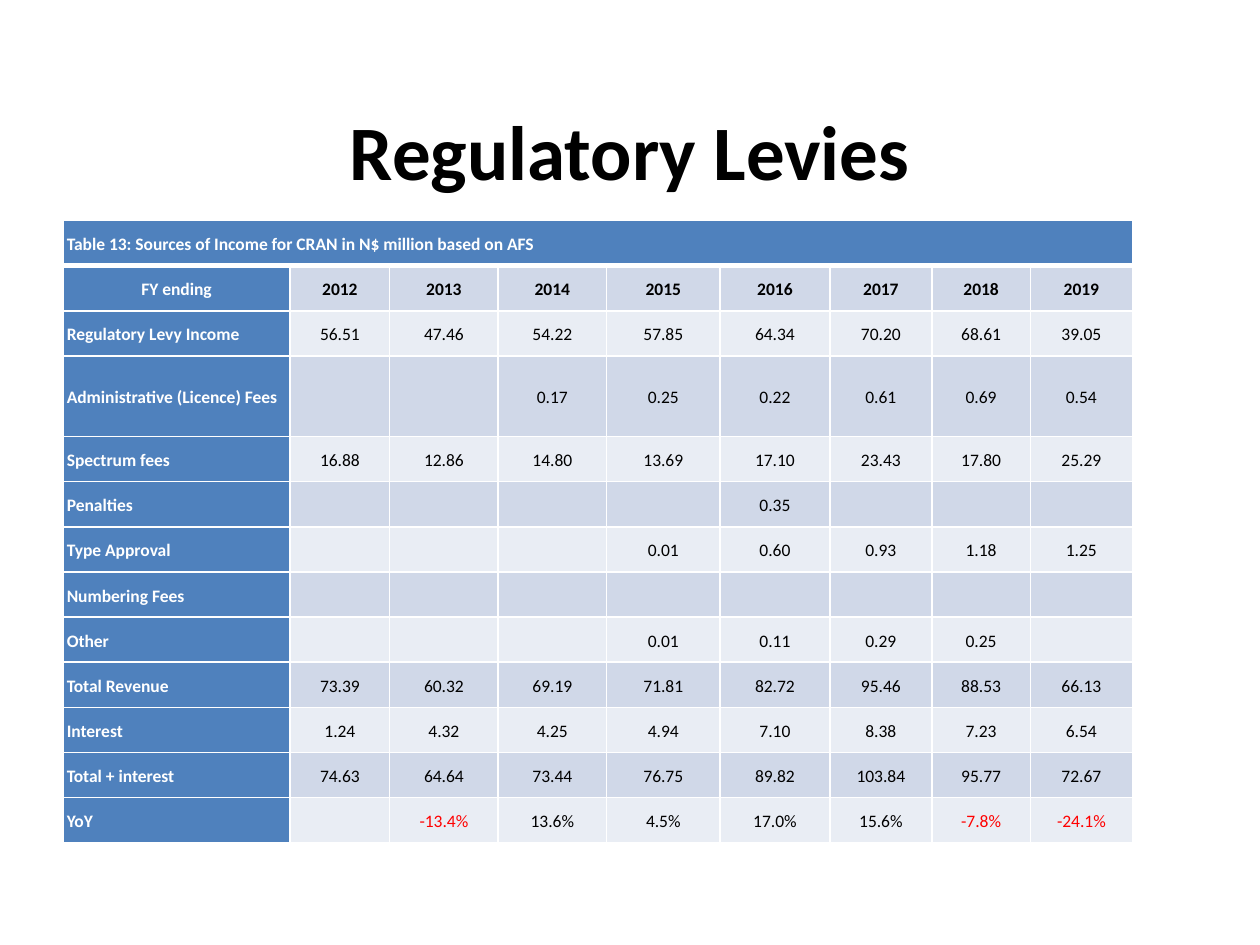
from dataclasses import dataclass

from lxml.etree import SubElement
from pptx import Presentation
from pptx.dml.color import RGBColor
from pptx.enum.text import MSO_ANCHOR as Anchor, PP_ALIGN as Align
from pptx.oxml.ns import qn
from pptx.util import Inches, Pt


@dataclass(frozen=True)
class Theme:
    font: str = "Calibri"
    title_size: int = 44
    cell_size: int = 10
    text: str = "000000"
    negative: str = "FF0000"
    light: str = "FFFFFF"
    accent: str = "4F81BD"
    bands: tuple = ("E9EDF4", "D0D8E8")
    rule: float = 1
    heavy_rule: float = 3


THEME = Theme()

TITLE = "Regulatory Levies"
CAPTION = "Table 13: Sources of Income for CRAN in N$ million based on AFS"
HEADINGS = ["FY ending", *(str(year) for year in range(2012, 2020))]
INCOME = [
    ["Regulatory Levy Income", "56.51", "47.46", "54.22", "57.85", "64.34", "70.20", "68.61", "39.05"],
    ["Administrative (Licence) Fees", "", "", "0.17", "0.25", "0.22", "0.61", "0.69", "0.54"],
    ["Spectrum fees", "16.88", "12.86", "14.80", "13.69", "17.10", "23.43", "17.80", "25.29"],
    ["Penalties", "", "", "", "", "0.35", "", "", ""],
    ["Type Approval", "", "", "", "0.01", "0.60", "0.93", "1.18", "1.25"],
    ["Numbering Fees", "", "", "", "", "", "", "", ""],
    ["Other", "", "", "", "0.01", "0.11", "0.29", "0.25", ""],
    ["Total Revenue", "73.39", "60.32", "69.19", "71.81", "82.72", "95.46", "88.53", "66.13"],
    ["Interest", "1.24", "4.32", "4.25", "4.94", "7.10", "8.38", "7.23", "6.54"],
    ["Total + interest", "74.63", "64.64", "73.44", "76.75", "89.82", "103.84", "95.77", "72.67"],
    ["YoY", "", "-13.4%", "13.6%", "4.5%", "17.0%", "15.6%", "-7.8%", "-24.1%"],
]
COLUMN_WIDTHS = [1.8, 0.79, 0.86, 0.86, 0.9, 0.87, 0.81, 0.78, 0.81]
TALL_ROW, TALL_HEIGHT = 3, 0.64


def style_font(font, size, color, bold):
    font.name = THEME.font
    font.size = Pt(size)
    font.bold = bold
    font.color.rgb = RGBColor.from_string(color)


def add_title(page, left, top, width, height):
    title = page.shapes.title
    title.left, title.top = Inches(left), Inches(top)
    title.width, title.height = Inches(width), Inches(height)
    frame = title.text_frame
    frame.text = TITLE
    frame.vertical_anchor = Anchor.MIDDLE
    para = frame.paragraphs[0]
    para.alignment = Align.CENTER
    style_font(para.font, THEME.title_size, THEME.text, True)


def set_borders(cell, top, bottom):
    # Border lines have to precede the fill in the cell properties
    properties = cell._tc.get_or_add_tcPr()
    weights = {"lnL": THEME.rule, "lnR": THEME.rule, "lnT": top, "lnB": bottom}
    for side, weight in weights.items():
        line = SubElement(properties, qn(f"a:{side}"), w=str(Pt(weight)))
        fill = SubElement(line, qn("a:solidFill"))
        SubElement(fill, qn("a:srgbClr"), val=THEME.light)


def cell_style(row, column, text):
    """Return fill, text colour, bold and alignment for a cell."""
    if row == 0:
        return THEME.accent, THEME.light, True, Align.LEFT
    if column == 0:
        alignment = Align.CENTER if row == 1 else Align.JUSTIFY
        return THEME.accent, THEME.light, True, alignment
    color = THEME.negative if text.startswith("-") else THEME.text
    return THEME.bands[row % 2], color, row == 1, Align.CENTER


def format_cell(cell, row, column, text):
    fill, color, bold, alignment = cell_style(row, column, text)
    set_borders(
        cell,
        top=THEME.heavy_rule if row == 1 else THEME.rule,
        bottom=THEME.heavy_rule if row == 0 else THEME.rule,
    )
    cell.fill.solid()
    cell.fill.fore_color.rgb = RGBColor.from_string(fill)
    cell.vertical_anchor = Anchor.MIDDLE
    cell.margin_left = cell.margin_right = Inches(0.03)
    cell.margin_top = cell.margin_bottom = Inches(0.03)
    para = cell.text_frame.paragraphs[0]
    para.alignment = alignment
    para.line_spacing = 1.15
    if text:
        para.text = text
    else:
        # Keeps an empty cell from stretching its row
        para._p.get_or_add_endParaRPr().set("sz", str(THEME.cell_size * 100))
    style_font(para.font, THEME.cell_size, color, bold)


def add_income_table(page, left, top, width, height):
    caption_row = [CAPTION] + [""] * (len(HEADINGS) - 1)
    rows = [caption_row, HEADINGS, *INCOME]
    table = page.shapes.add_table(
        len(rows), len(HEADINGS), Inches(left), Inches(top), Inches(width), Inches(height)
    ).table

    # Column widths share the box; all rows but one are equally high
    scale = width / sum(COLUMN_WIDTHS)
    for column, share in zip(table.columns, COLUMN_WIDTHS):
        column.width = Inches(share * scale)
    row_height = (height - TALL_HEIGHT) / (len(rows) - 1)
    for index, row in enumerate(table.rows):
        row.height = Inches(TALL_HEIGHT if index == TALL_ROW else row_height)

    table.cell(0, 0).merge(table.cell(0, len(HEADINGS) - 1))
    for row, texts in enumerate(rows):
        for column, text in enumerate(texts):
            format_cell(table.cell(row, column), row, column, text)


def main():
    deck = Presentation()
    deck.slide_width, deck.slide_height = Inches(10), Inches(7.5)
    title_only = deck.slide_layouts[5]
    page = deck.slides.add_slide(title_only)
    add_title(page, 0.5, 0.63, 9, 1.12)
    add_income_table(page, 0.5, 1.75, 8.49, 4.94)
    deck.save("out.pptx")


if __name__ == "__main__":
    main()
